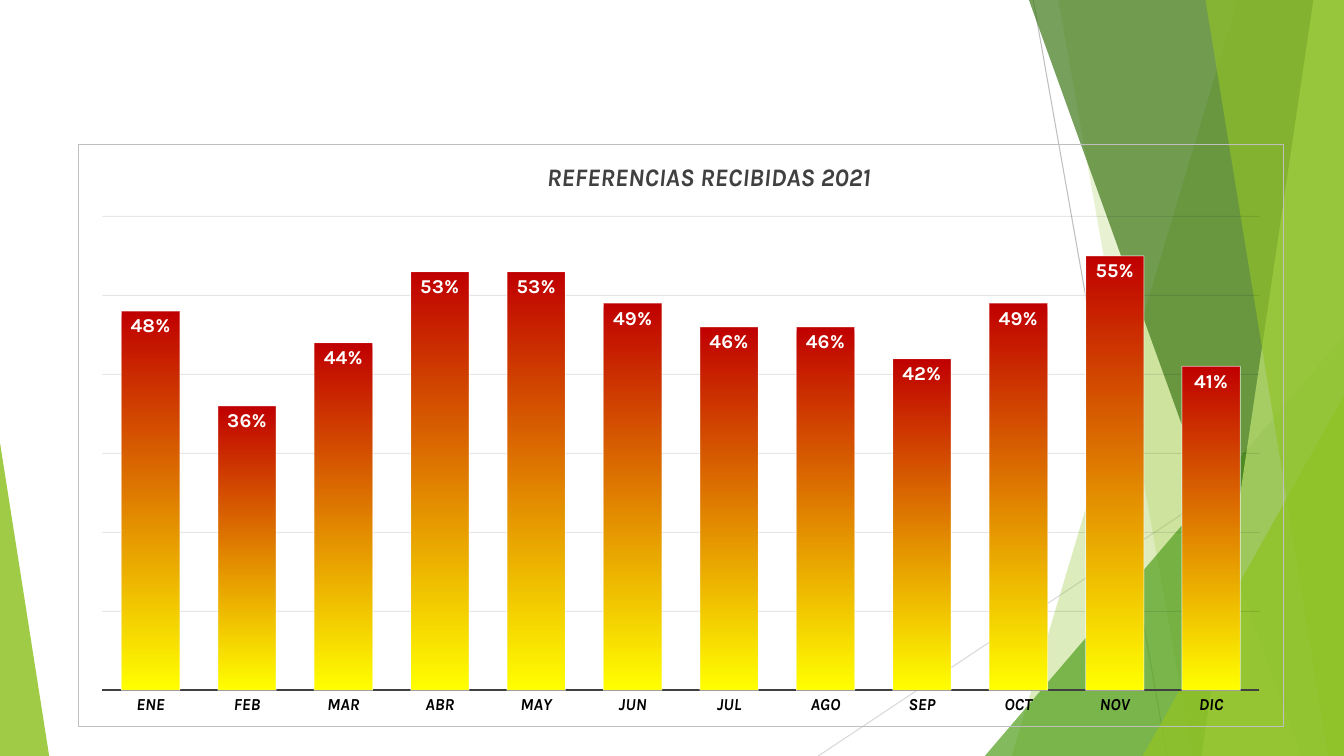
from lxml.etree import SubElement
from pptx import Presentation
from pptx.chart.data import CategoryChartData
from pptx.dml.color import RGBColor
from pptx.enum.chart import XL_CHART_TYPE, XL_LABEL_POSITION, XL_TICK_LABEL_POSITION, XL_TICK_MARK
from pptx.enum.shapes import MSO_CONNECTOR, MSO_SHAPE
from pptx.oxml import parse_xml
from pptx.oxml.ns import nsdecls, qn
from pptx.util import Cm, Pt

TITLE = "REFERENCIAS RECIBIDAS 2021"
REFERRALS = {
    "ENE": 0.48, "FEB": 0.36, "MAR": 0.44, "ABR": 0.53, "MAY": 0.53, "JUN": 0.49,
    "JUL": 0.46, "AGO": 0.46, "SEP": 0.42, "OCT": 0.49, "NOV": 0.55, "DIC": 0.41,
}
COLORS = {
    "lime": "90C226", "green": "54A021", "forest": "3F7819", "pale": "C0E474",
    "gray": "BFBFBF", "silver": "D9D9D9", "dark": "404040", "grid": "0D0D0D",
    "black": "000000", "white": "FFFFFF", "red": "C00000", "yellow": "FFFF00",
}
WIDTH, HEIGHT = 33.87, 19.05
LINES = [
    ((26.04, 0), (29.41, HEIGHT), "gray"),
    ((WIDTH, 10.24), (20.62, HEIGHT), "silver"),
]
FACETS = [
    ("band", (31.19, 25.5), "lime", 30),
    ("band", (26.67, 30.05), "lime", 20),
    ("triangle", (24.82, 8.46, 9.05, 1), "green", 72),
    ("band", (25.93, 32.79), "forest", 70),
    ("band", (33.1, 30.28), "pale", 70),
    ("band", (30.38, 33.48), "lime", 65),
    ("triangle", (28.8, 9.98, 5.07, 1), "lime", 80),
    ("triangle", (0, 11.15, 1.24, 0), "lime", 85),
]
CHART_BOX = (1.96, 3.62, 30.4, 14.7)
TITLE_LAYOUT = {"x": 0.385, "y": 0.02}
PLOT_LAYOUT = {"x": 0.02, "y": 0.124, "w": 0.96, "h": 0.814}


def rgb(name):
    """Return the named colour."""
    return RGBColor.from_string(COLORS[name])


def set_alpha(element, percent):
    """Make every plain colour inside the element translucent."""
    for clr in element.iter(qn("a:srgbClr")):
        SubElement(clr, qn("a:alpha"), val=str(percent * 1000))


def style_line(line, color, width):
    """Give a line its colour and width."""
    line.color.rgb = rgb(color)
    line.width = Pt(width)


def style_font(font, color, **values):
    """Set the chart font, its colour and other values."""
    font.color.rgb = rgb(color)
    for key, value in {"name": "Karla", **values}.items():
        setattr(font, key, value)


def add_line(s, start, end, color):
    """Draw a thin decorative line."""
    c = s.shapes.add_connector(MSO_CONNECTOR.STRAIGHT, *map(Cm, start + end))
    style_line(c.line, color, 0.75)
    SubElement(c._element.spPr, qn("a:effectLst"))


def add_facet(s, kind, place, color, alpha):
    """Draw a translucent band reaching the right edge, or a right triangle."""
    if kind == "band":
        top, bottom = place
        fb = s.shapes.build_freeform(Cm(top), 0)
        corners = [(WIDTH, 0), (WIDTH, HEIGHT), (bottom, HEIGHT)]
        fb.add_line_segments([(Cm(x), Cm(y)) for x, y in corners])
        sp = fb.convert_to_shape()
    else:
        x, y, w, apex = place
        sp = s.shapes.add_shape(
            MSO_SHAPE.ISOSCELES_TRIANGLE, Cm(x), Cm(y), Cm(w), Cm(HEIGHT - y))
        sp.adjustments[0] = apex
    sp.shadow.inherit = False
    sp.fill.solid()
    sp.fill.fore_color.rgb = rgb(color)
    set_alpha(sp._element.spPr, alpha)
    sp.line.fill.background()


def set_layout(parent, index, values):
    """Place a chart part by fractions of the chart area."""
    for old in parent.findall(qn("c:layout")):
        parent.remove(old)
    layout = parse_xml(f"<c:layout {nsdecls('c')}><c:manualLayout/></c:layout>")
    manual = layout[0]
    if "w" in values:
        SubElement(manual, qn("c:layoutTarget"), val="inner")
    for key in ("x", "y"):
        SubElement(manual, qn(f"c:{key}Mode"), val="edge")
    for key, value in values.items():
        SubElement(manual, qn(f"c:{key}"), val=str(value))
    parent.insert(index, layout)


def add_chart(s):
    """Add the monthly column chart."""
    data = CategoryChartData(number_format="0%")
    data.categories = list(REFERRALS)
    data.add_series("Series 1", list(REFERRALS.values()))
    chart = s.shapes.add_chart(
        XL_CHART_TYPE.COLUMN_CLUSTERED, *map(Cm, CHART_BOX), data).chart
    style_font(chart.font, "black", size=Pt(10))
    chart.has_legend = False
    chart.has_title = True
    p = chart.chart_title.text_frame.paragraphs[0]
    r = p.add_run()
    r.text = TITLE
    style_font(r.font, "dark", size=Pt(18), bold=True, italic=True)
    set_layout(chart.chart_title._element, 1, TITLE_LAYOUT)

    cat = chart.category_axis
    cat.major_tick_mark = XL_TICK_MARK.NONE
    style_font(cat.tick_labels.font, "black", size=Pt(12), bold=True, italic=True)
    style_line(cat.format.line, "dark", 1.5)
    val = chart.value_axis
    limits = {"minimum_scale": 0, "maximum_scale": 0.6, "major_unit": 0.1, "visible": False,
              "tick_label_position": XL_TICK_LABEL_POSITION.NONE}
    for key, value in limits.items():
        setattr(val, key, value)
    style_line(val.major_gridlines.format.line, "grid", 0.75)
    set_alpha(val._element.find(qn("c:majorGridlines")), 10)

    plot = chart.plots[0]
    plot.gap_width = 65
    plot.vary_by_categories = False
    bars = plot.series[0]
    style_line(bars.format.line, "white", 0.75)
    set_alpha(bars._element.find(qn("c:spPr")), 50)
    fill = bars.format.fill
    fill.gradient()
    fill.gradient_angle = 270
    for stop, color in zip(fill.gradient_stops, ("red", "yellow")):
        stop.color.rgb = rgb(color)
    labels = bars.data_labels
    formats = {"show_value": True, "position": XL_LABEL_POSITION.INSIDE_END,
               "number_format": "0%", "number_format_is_linked": False}
    for key, value in formats.items():
        setattr(labels, key, value)
    style_font(labels.font, "white", size=Pt(14), bold=True)

    space = chart._chartSpace
    area = space.find(qn("c:chart")).find(qn("c:plotArea"))
    set_layout(area, 0, PLOT_LAYOUT)
    area.append(parse_xml(f"<c:spPr {nsdecls('c', 'a')}><a:noFill/></c:spPr>"))
    space.find(qn("c:txPr")).addprevious(parse_xml(
        f"<c:spPr {nsdecls('c', 'a')}><a:noFill/><a:ln w='9525'><a:solidFill>"
        f"<a:srgbClr val='{COLORS['gray']}'/></a:solidFill></a:ln></c:spPr>"))


def main():
    """Build the slide."""
    prs = Presentation()
    prs.slide_width, prs.slide_height = Cm(WIDTH), Cm(HEIGHT)
    s = prs.slides.add_slide(prs.slide_layouts[6])
    for line in LINES:
        add_line(s, *line)
    for facet in FACETS:
        add_facet(s, *facet)
    add_chart(s)
    prs.save("out.pptx")


if __name__ == "__main__":
    main()
